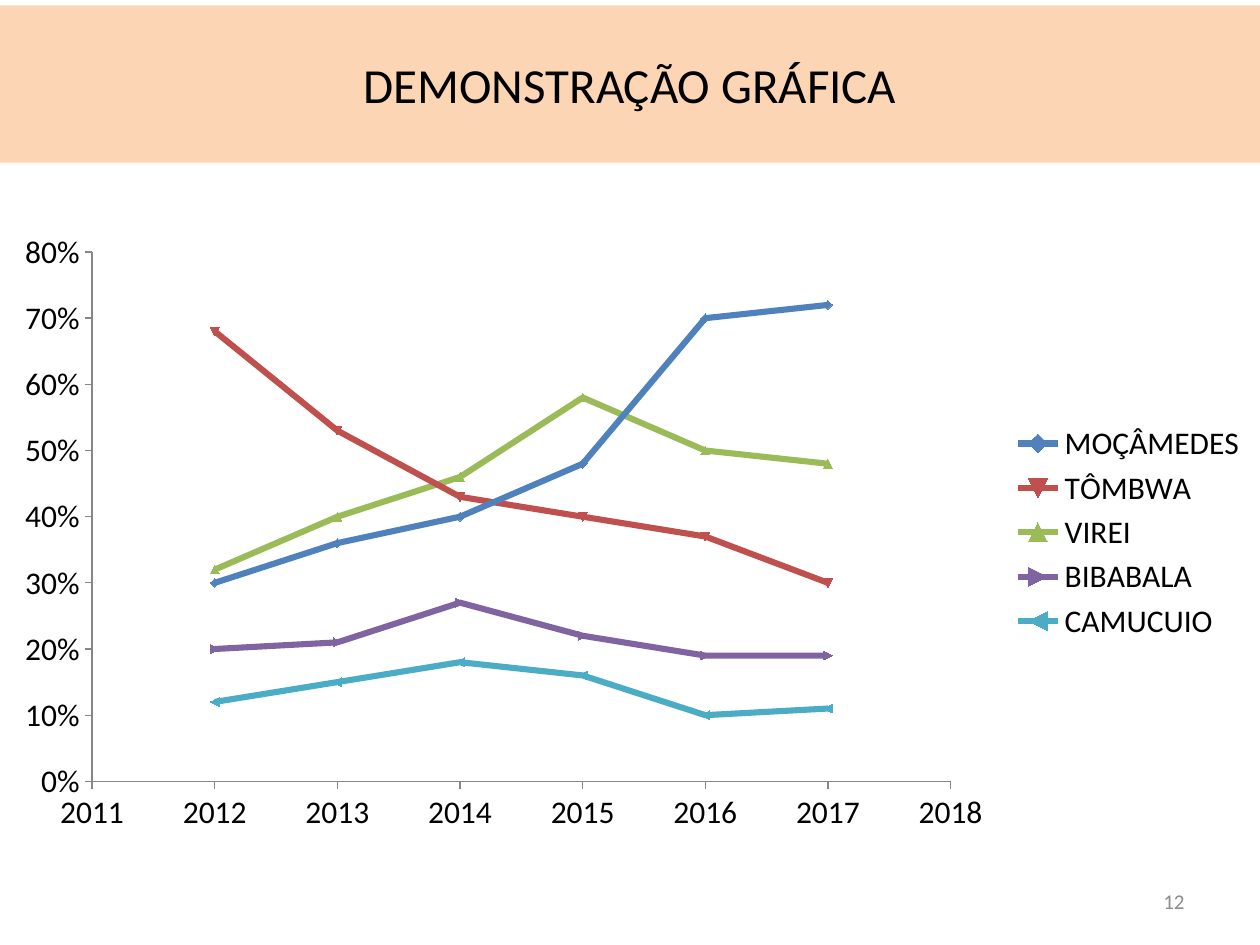
from pptx import Presentation
from pptx.chart.data import XyChartData
from pptx.dml.color import RGBColor
from pptx.enum.chart import XL_CHART_TYPE as CT, XL_LEGEND_POSITION as LP, XL_TICK_MARK as TM
from pptx.enum.shapes import MSO_SHAPE as SHAPE
from pptx.enum.text import MSO_ANCHOR as ANCHOR, PP_ALIGN as ALIGN
from pptx.util import Pt

YEARS = range(2012, 2018)
SERIES = [
    ("MOÇÂMEDES", "4F81BD", (0.30, 0.36, 0.40, 0.48, 0.70, 0.72)),
    ("TÔMBWA", "C0504D", (0.68, 0.53, 0.43, 0.40, 0.37, 0.30)),
    ("VIREI", "9BBB59", (0.32, 0.40, 0.46, 0.58, 0.50, 0.48)),
    ("BIBABALA", "8064A2", (0.20, 0.21, 0.27, 0.22, 0.19, 0.19)),
    ("CAMUCUIO", "4BACC6", (0.12, 0.15, 0.18, 0.16, 0.10, 0.11)),
]


def rgb(code):
    return RGBColor.from_string(code)


class Deck:
    font, ink, grey, band_fill, axis_line = "Calibri", "000000", "8C8C8C", "FCD5B5", "868686"

    def __init__(self, width, height):
        self.prs = Presentation()
        self.prs.slide_width, self.prs.slide_height = Pt(width), Pt(height)
        self.s = self.prs.slides.add_slide(self.prs.slide_layouts[6])

    def style(self, font, size, color):
        font.name, font.size = self.font, Pt(size)
        font.color.rgb = rgb(color)

    def set_text(self, sp, text, size, color, align):
        tf = sp.text_frame
        tf.word_wrap = True
        tf.vertical_anchor = ANCHOR.MIDDLE
        p = tf.paragraphs[0]
        p.text, p.alignment = text, align
        self.style(p.font, size, color)

    def band(self, box, text):
        sp = self.s.shapes.add_shape(SHAPE.RECTANGLE, *map(Pt, box))
        sp.shadow.inherit = False
        sp.fill.solid()
        sp.fill.fore_color.rgb = rgb(self.band_fill)
        sp.line.fill.background()
        self.set_text(sp, text, 28, self.ink, ALIGN.CENTER)

    def label(self, box, text):
        sp = self.s.shapes.add_textbox(*map(Pt, box))
        self.set_text(sp, text, 12, self.grey, ALIGN.RIGHT)

    def axis(self, axis, low, high, step, number_format):
        axis.minimum_scale, axis.maximum_scale, axis.major_unit = low, high, step
        axis.has_major_gridlines = False
        axis.major_tick_mark, axis.minor_tick_mark = TM.OUTSIDE, TM.NONE
        axis.tick_labels.number_format = number_format
        axis.tick_labels.number_format_is_linked = False
        axis.format.line.color.rgb = rgb(self.axis_line)

    def scatter(self, box, xs, series):
        data = XyChartData()
        for name, _, values in series:
            points = data.add_series(name)
            for x, y in zip(xs, values):
                points.add_data_point(x, y)
        chart = self.s.shapes.add_chart(CT.XY_SCATTER_LINES, *map(Pt, box), data).chart
        self.style(chart.font, 18, self.ink)
        chart.has_title = False
        chart.has_legend = True
        chart.legend.position = LP.RIGHT
        chart.legend.include_in_layout = False
        self.axis(chart.category_axis, xs[0] - 1, xs[-1] + 1, 1, "General")
        self.axis(chart.value_axis, 0, 0.8, 0.1, "0%")
        plot = chart.plots[0]
        plot.vary_by_categories = False
        for line, (_, color, _) in zip(plot.series, series):
            line.smooth = False
            line.format.line.width = Pt(3.5)
            line.format.line.color.rgb = rgb(color)


def main():
    deck = Deck(720, 540)
    # Title band
    deck.band((0, 3, 720, 90), "DEMONSTRAÇÃO GRÁFICA")
    # Yearly share of each municipality
    deck.scatter((0, 126, 720, 356.5), YEARS, SERIES)
    # Slide number
    deck.label((516, 500.5, 168, 28.75), "12")
    deck.prs.save("out.pptx")


if __name__ == "__main__":
    main()
